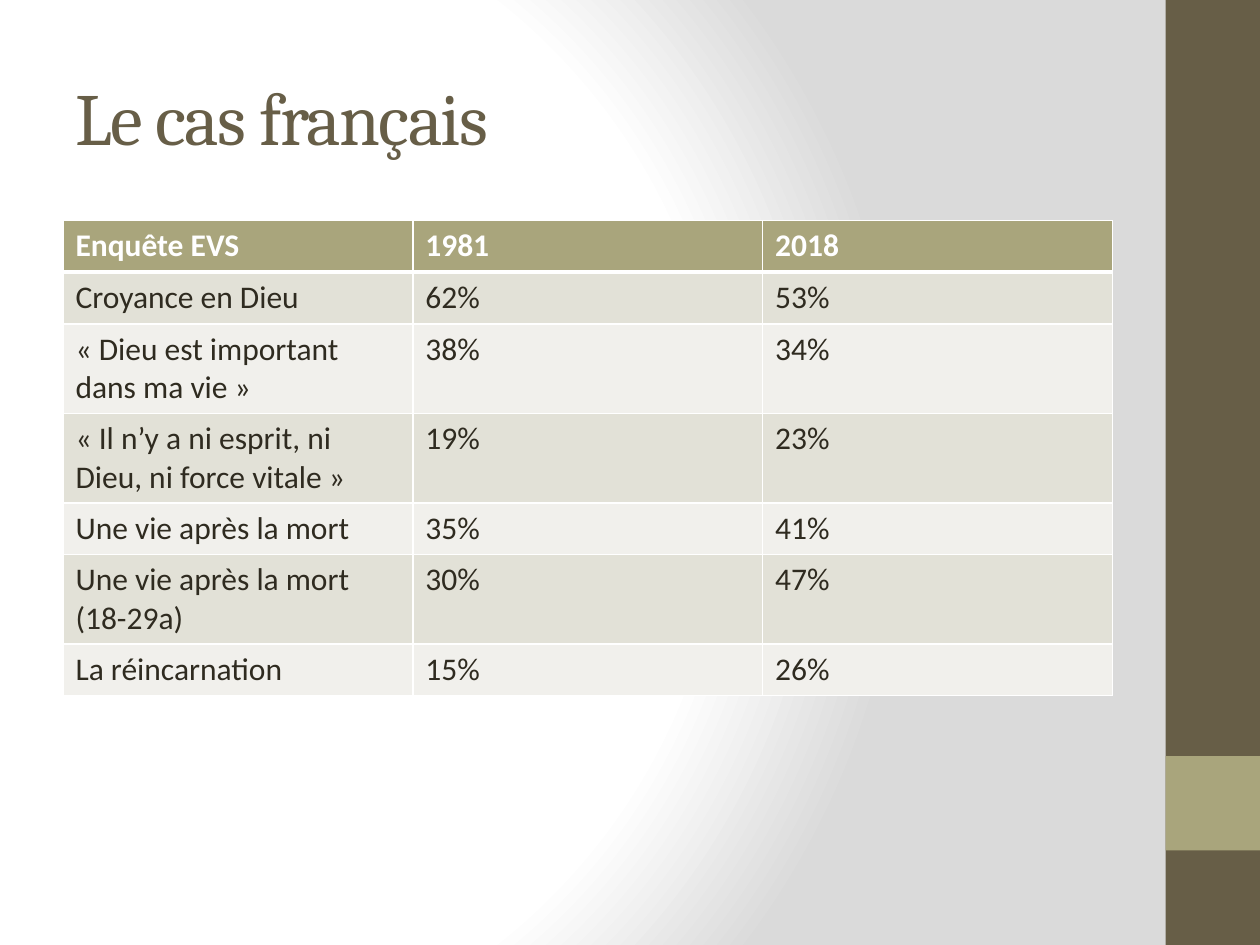
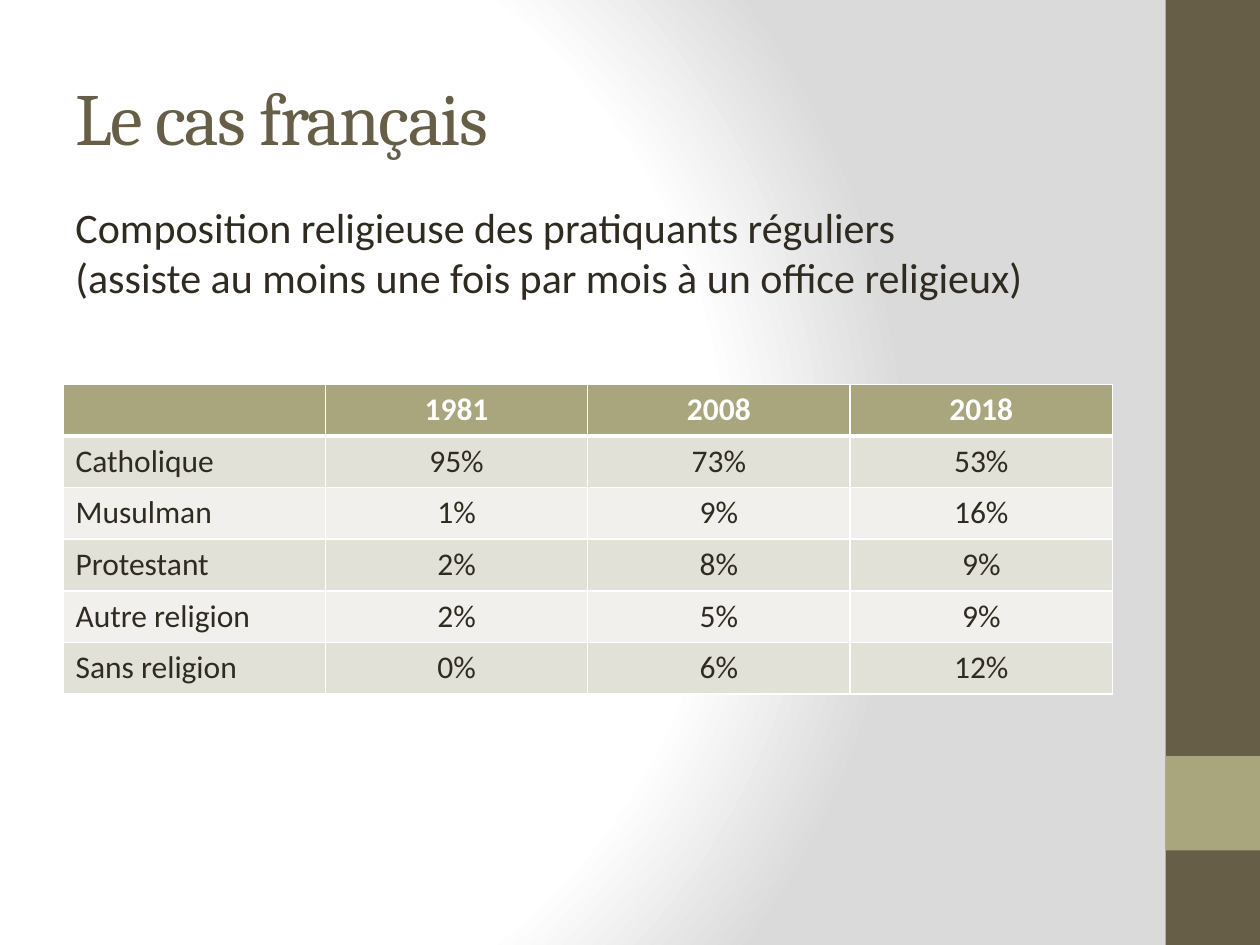
from dataclasses import dataclass

from pptx import Presentation
from pptx.dml.color import RGBColor as Rgb
from pptx.enum.shapes import MSO_SHAPE as Kind
from pptx.enum.text import MSO_ANCHOR as Anchor, MSO_AUTO_SIZE as Fit, PP_ALIGN as Align
from pptx.oxml import parse_xml
from pptx.oxml.ns import nsdecls
from pptx.util import Inches, Pt


@dataclass(frozen=True)
class Theme:
    dark: str = "675E47"
    olive: str = "A9A57C"
    ink: str = "2F2B20"
    white: str = "FFFFFF"
    gray: str = "DADADA"
    bands: tuple = ("E2E1D7", "F1F0EC")
    serif: str = "Cambria"
    sans: str = "Calibri"
    head: int = 42
    lead: int = 24
    cell: int = 18


LOOK = Theme()
TITLE = (0.5, 0.3, 8.33, 1.25)
LEAD = (0.5, 1.55, 7.82, 1.21)
STRIP = (9.25, 0, 0.75, 7.5)
ROW = 0.41

BELIEFS = [
    ("Enquête EVS", "1981", "2018"),
    ("Croyance en Dieu", "62%", "53%"),
    ("« Dieu est important dans ma vie »", "38%", "34%"),
    ("« Il n’y a ni esprit, ni Dieu, ni force vitale »", "19%", "23%"),
    ("Une vie après la mort", "35%", "41%"),
    ("Une vie après la mort (18-29a)", "30%", "47%"),
    ("La réincarnation", "15%", "26%"),
]
FAITHS = [
    ("", "1981", "2008", "2018"),
    ("Catholique", "95%", "73%", "53%"),
    ("Musulman", "1%", "9%", "16%"),
    ("Protestant", "2%", "8%", "9%"),
    ("Autre religion", "2%", "5%", "9%"),
    ("Sans religion", "0%", "6%", "12%"),
]
SCOPE = [
    "Composition religieuse des pratiquants réguliers",
    "(assiste au moins une fois par mois à un office religieux)",
]


def style(frame, font, size, color, bold=False):
    for para in frame.paragraphs:
        for run in para.runs:
            run.font.name = font
            run.font.size = Pt(size)
            run.font.bold = bold
            run.font.color.rgb = Rgb.from_string(color)


def paint_back(master):
    stops = "".join(
        f'<a:gs pos="{pos * 1000}"><a:srgbClr val="{color}"/></a:gs>'
        for pos, color in ((0, LOOK.white), (75, LOOK.white), (100, LOOK.gray))
    )
    master.background.fill.solid()
    base = master.element.cSld.bg.bgPr
    base.replace(base[0], parse_xml(
        f'<a:gradFill {nsdecls("a")} rotWithShape="1"><a:gsLst>{stops}</a:gsLst>'
        '<a:path path="circle"><a:fillToRect l="20000" t="50000" r="100000" b="50000"/>'
        "</a:path></a:gradFill>"
    ))


def add_strip(master, slide, box):
    left, top, width, height = box
    blocks = ((top, height, LOOK.dark), (top + height - 2 * width, width, LOOK.olive))
    tree = master.element.cSld.spTree
    for spot, (y, tall, color) in enumerate(blocks, 2):
        block = slide.shapes.add_shape(
            Kind.RECTANGLE, Inches(left), Inches(y), Inches(width), Inches(tall))
        block.shadow.inherit = False
        block.fill.solid()
        block.fill.fore_color.rgb = Rgb.from_string(color)
        block.line.fill.background()
        tree.insert(spot, block.element)


def set_title(slide, text, box):
    title = slide.shapes.title
    title.left, title.top, title.width, title.height = map(Inches, box)
    frame = title.text_frame
    frame.text = text
    frame.auto_size = Fit.NONE
    frame.vertical_anchor = Anchor.MIDDLE
    para = frame.paragraphs[0]
    para.alignment = Align.LEFT
    style(frame, LOOK.serif, LOOK.head, LOOK.dark)
    para.runs[0].font.element.set("spc", "-100") if hasattr(
        para.runs[0].font, "element") else para.runs[0]._r.get_or_add_rPr().set("spc", "-100")


def add_lead(slide, lines, box):
    frame = slide.shapes.add_textbox(*map(Inches, box)).text_frame
    frame.text = "\n".join(lines)
    frame.word_wrap = False
    frame.auto_size = Fit.SHAPE_TO_FIT_TEXT
    style(frame, LOOK.sans, LOOK.lead, LOOK.ink)


def set_edges(cell, top, base):
    props = cell._tc.get_or_add_tcPr()
    for side, width in (("L", 1), ("R", 1), ("T", top), ("B", base)):
        props.append(parse_xml(
            f'<a:ln{side} {nsdecls("a")} w="{Pt(width)}"><a:solidFill>'
            f'<a:srgbClr val="{LOOK.white}"/></a:solidFill></a:ln{side}>'
        ))


def add_grid(slide, rows, box, align):
    shape = slide.shapes.add_table(len(rows), len(rows[0]), *map(Inches, box))
    table = shape.table
    for line in table.rows:
        line.height = Inches(ROW)
    for y, row in enumerate(rows):
        head = y == 0
        fill = LOOK.olive if head else LOOK.bands[(y - 1) % 2]
        for x, text in enumerate(row):
            cell = table.cell(y, x)
            set_edges(cell, 3 if y == 1 else 1, 3 if head else 1)
            cell.fill.solid()
            cell.fill.fore_color.rgb = Rgb.from_string(fill)
            frame = cell.text_frame
            frame.text = text
            frame.paragraphs[0].alignment = align if x else Align.LEFT
            style(frame, LOOK.sans, LOOK.cell, LOOK.white if head else LOOK.ink, head)


def add_page(deck, rows, top, align, lead=()):
    slide = deck.slides.add_slide(deck.slide_layouts.get_by_name("Title Only"))
    set_title(slide, "Le cas français", TITLE)
    add_grid(slide, rows, (TITLE[0], top, TITLE[2], ROW * len(rows)), align)
    if lead:
        add_lead(slide, lead, LEAD)
    return slide


def main():
    deck = Presentation()
    deck.slide_width, deck.slide_height = Inches(10), Inches(7.5)
    paint_back(deck.slide_master)
    first = add_page(deck, BELIEFS, 1.75, Align.LEFT)
    add_strip(deck.slide_master, first, STRIP)
    add_page(deck, FAITHS, 3.05, Align.CENTER, SCOPE)
    deck.save("out.pptx")


if __name__ == "__main__":
    main()
